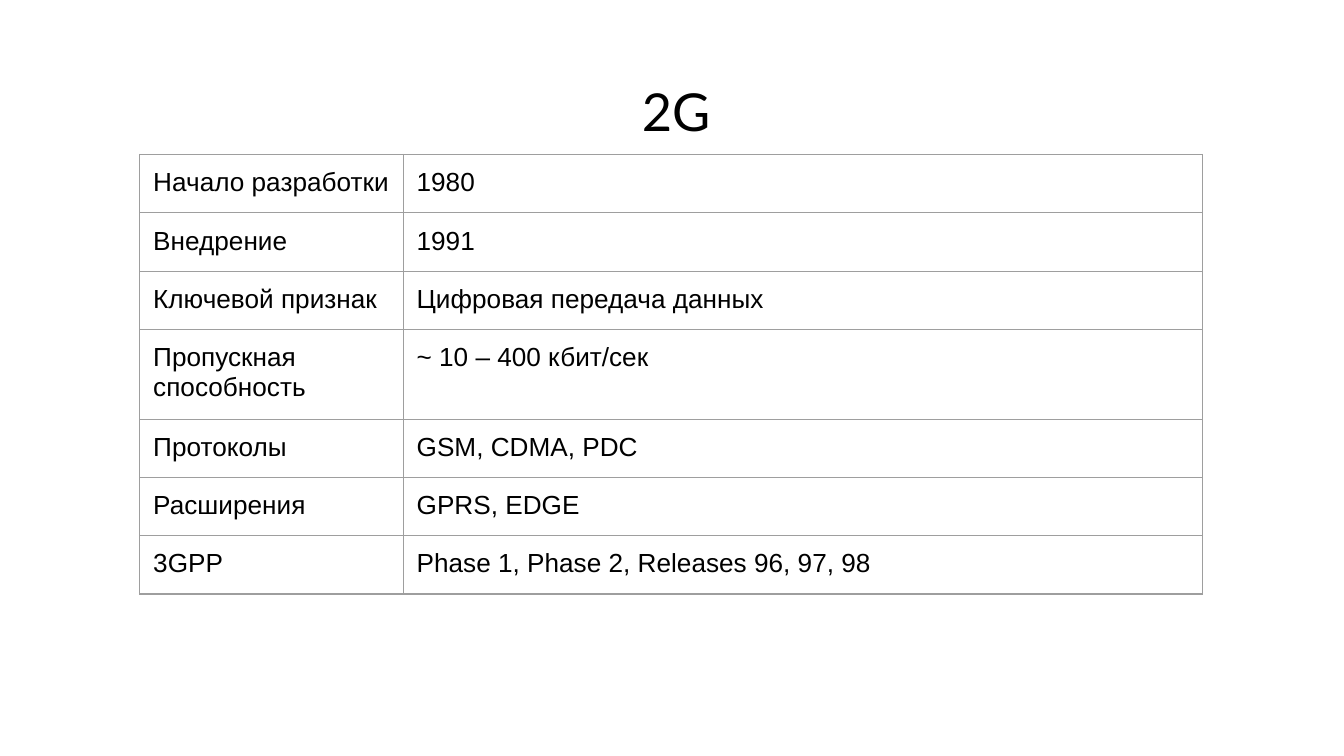
"""Builds a slide that lists the main facts about 2G mobile networks in a table."""
from typing import NamedTuple

from lxml.etree import SubElement
from pptx import Presentation
from pptx.dml.color import RGBColor
from pptx.enum.text import MSO_ANCHOR as Anchor, PP_ALIGN as Align
from pptx.oxml.ns import qn
from pptx.util import Inches, Pt

BLACK = "000000"
GREY = "9E9E9E"
INSET = Inches(0.1)
ROW_HEIGHT = Inches(5 / 12)
COLUMN_WIDTHS = (Inches(1.96), Inches(5.95))
FRAME_SIDE = Inches(3.28)


class Fact(NamedTuple):
    label: str
    value: str


FACTS = (
    Fact("Начало разработки", "1980"),
    Fact("Внедрение", "1991"),
    Fact("Ключевой признак", "Цифровая передача данных"),
    Fact("Пропускная способность", "~ 10 – 400 кбит/сек"),
    Fact("Протоколы", "GSM, CDMA, PDC"),
    Fact("Расширения", "GPRS, EDGE"),
    Fact("3GPP", "Phase 1, Phase 2, Releases 96, 97, 98"),
)


def color(value: str) -> RGBColor:
    return RGBColor.from_string(value)


def set_insets(holder) -> None:
    holder.margin_left = holder.margin_right = INSET
    holder.margin_top = holder.margin_bottom = INSET
    holder.vertical_anchor = Anchor.TOP


def write(frame, text: str, font_name: str, size: float, align: Align) -> None:
    frame.text = text
    frame.word_wrap = True
    paragraph = frame.paragraphs[0]
    paragraph.alignment = align
    font = paragraph.runs[0].font
    font.name = font_name
    font.size = Pt(size)
    font.bold = False
    font.color.rgb = color(BLACK)


def add_borders(cell, line_color: str, width: float) -> None:
    properties = cell._tc.get_or_add_tcPr()
    for position, side in enumerate(("lnL", "lnR", "lnT", "lnB")):
        line = SubElement(properties, qn(f"a:{side}"), w=str(Pt(width)))
        fill = SubElement(line, qn("a:solidFill"))
        SubElement(fill, qn("a:srgbClr"), val=line_color)
        properties.insert(position, line)


def add_title(slide, text: str) -> None:
    title = slide.shapes.add_textbox(Inches(0.4), Inches(0.49), Inches(9.26), Inches(0.63))
    set_insets(title.text_frame)
    write(title.text_frame, text, "Lato", 28, Align.CENTER)


def add_facts(slide, facts: tuple[Fact, ...]) -> None:
    frame = slide.shapes.add_table(
        len(facts), len(COLUMN_WIDTHS), Inches(1.04), Inches(1.15), FRAME_SIDE, FRAME_SIDE
    )
    table = frame.table
    table.first_row = table.horz_banding = False
    for column, width in zip(table.columns, COLUMN_WIDTHS):
        column.width = width
    for row, fact in zip(table.rows, facts):
        row.height = ROW_HEIGHT
        for cell, text in zip(row.cells, fact):
            set_insets(cell)
            write(cell.text_frame, text, "Arial", 14, Align.LEFT)
            cell.fill.background()
            add_borders(cell, GREY, 0.75)
    frame.width = frame.height = FRAME_SIDE


def main() -> None:
    presentation = Presentation()
    presentation.slide_width = Inches(10)
    presentation.slide_height = presentation.slide_width * 9 // 16
    slide = presentation.slides.add_slide(presentation.slide_layouts[6])
    add_title(slide, "2G")
    add_facts(slide, FACTS)
    presentation.save("out.pptx")


if __name__ == "__main__":
    main()
